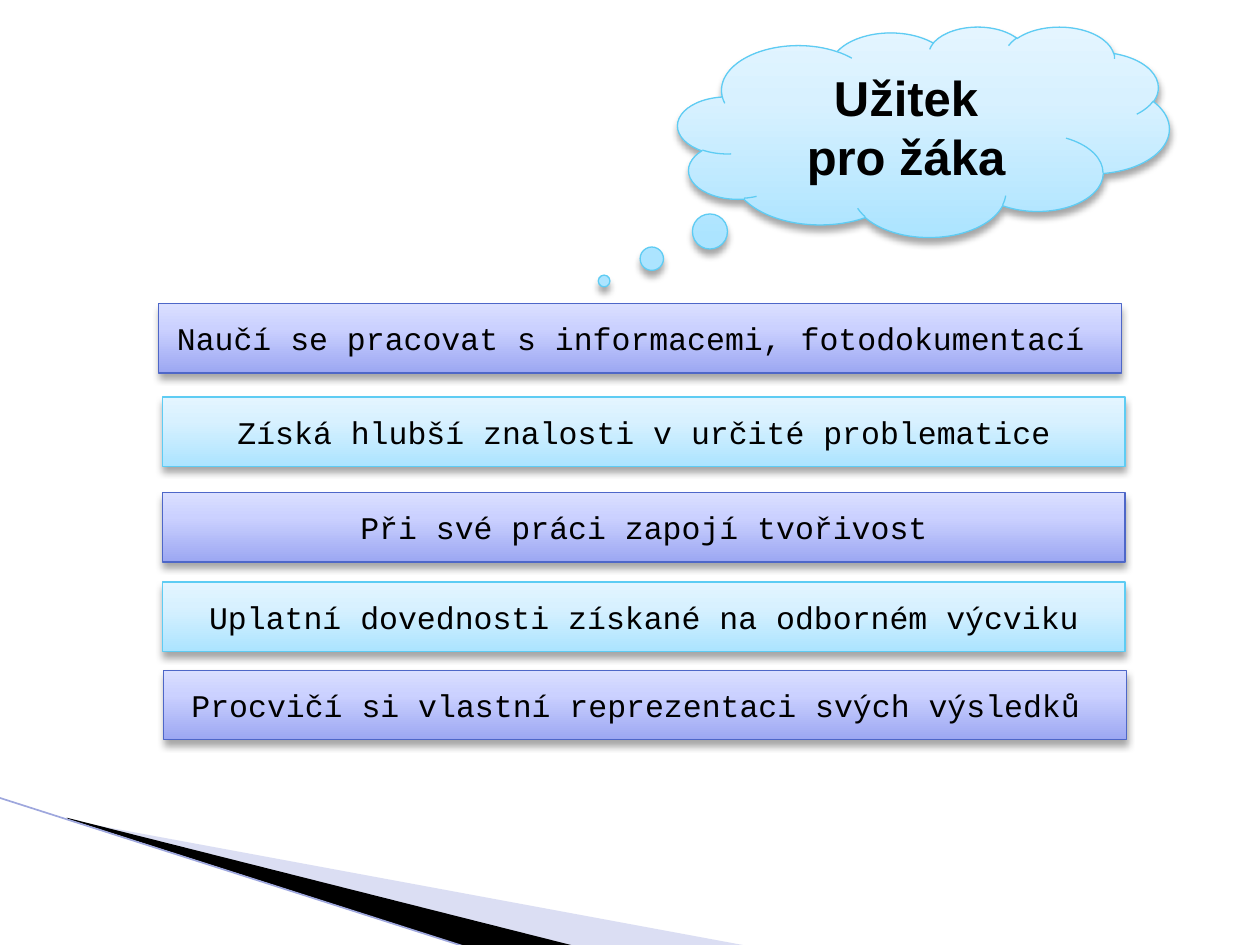
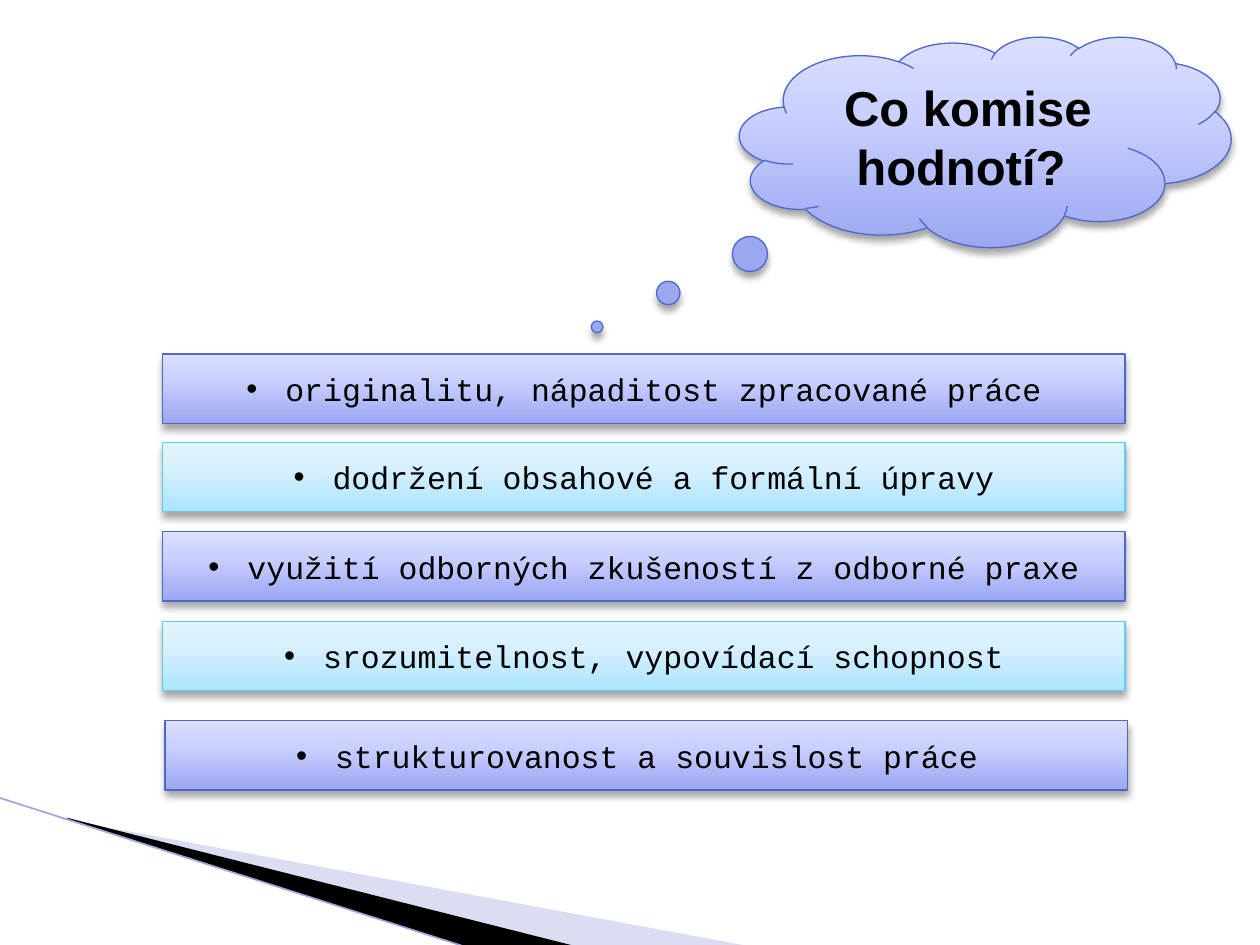
from copy import deepcopy

from lxml.etree import SubElement
from pptx import Presentation
from pptx.dml.color import RGBColor
from pptx.enum.shapes import MSO_CONNECTOR, MSO_SHAPE
from pptx.enum.text import MSO_ANCHOR, PP_ALIGN
from pptx.oxml.ns import qn
from pptx.util import Inches, Pt

# Content: each bar is (left, top, text)
SLIDES = [
    {
        "cloud": (5.38, 0.21), "tail": (-0.65, 0.71), "cloud_tone": "sky",
        "title": ["Užitek", "pro žáka"],
        "bullets": False,
        "bars": [
            (1.26, 2.41, "Naučí se pracovat s informacemi, fotodokumentací "),
            (1.29, 3.15, "Získá hlubší znalosti v určité problematice"),
            (1.29, 3.91, "Při své práci zapojí tvořivost"),
            (1.29, 4.62, "Uplatní dovednosti získané na odborném výcviku"),
            (1.3, 5.32, "Procvičí si vlastní reprezentaci svých výsledků "),
        ],
    },
    {
        "cloud": (5.87, 0.29), "tail": (-0.79, 0.88), "cloud_tone": "violet",
        "title": ["Co komise hodnotí? "],
        "bullets": True,
        "bars": [
            (1.29, 2.81, "originalitu, nápaditost zpracované práce"),
            (1.29, 3.51, "dodržení obsahové a formální úpravy"),
            (1.29, 4.22, "využití odborných zkušeností z odborné praxe"),
            (1.29, 4.93, "srozumitelnost, vypovídací schopnost"),
            (1.31, 5.72, "strukturovanost a souvislost práce "),
        ],
    },
]

# Shared style
COLORS = {
    "text": "000000", "shadow": "000000", "title_outline": "B4DCFA",
    "pale_wedge": "A6AEE1", "dark_wedge": "000000", "edge": "9EA7DD",
    "violet_line": "4E67C8", "sky_line": "5ECCF3",
}
GRADIENTS = {
    "violet": ["9CA7F2", "CBD1FF", "DADFFF"],
    "sky": ["ACE4FF", "D8F1FF", "E4F5FF"],
}
GRADIENT_STOPS = [0, 0.65, 1]
BAR_TONES = ["violet", "sky"]
BAR_SIZE = (7.64, 0.55)
CLOUD_SIZE = (3.9, 1.67)
BULLET_INDENT = 0.31

# Corner decoration: (colour, opacity in percent, outline points)
WEDGES = [
    ("pale_wedge", 40, [(0.55, 6.51), (5.95, 7.51), (4.56, 7.51), (0.55, 6.5)]),
    ("dark_wedge", 100, [(0.53, 6.49), (4.57, 7.51), (3.72, 7.52), (0.54, 6.5)]),
]
EDGE = (-0.01, 6.33, 3.71, 7.52)


def rgb(name):
    return RGBColor.from_string(COLORS[name])


def add_color(parent, name, opacity=100):
    color = SubElement(parent, qn("a:srgbClr"), val=COLORS[name])
    if opacity < 100:
        SubElement(color, qn("a:alpha"), val=str(opacity * 1000))


def add_corner(page):
    for color, opacity, points in WEDGES:
        corners = [(Inches(x), Inches(y)) for x, y in points]
        builder = page.shapes.build_freeform(*corners[0])
        builder.add_line_segments(corners[1:], close=True)
        wedge = builder.convert_to_shape()
        wedge.shadow.inherit = False
        wedge.line.fill.background()
        wedge.fill.solid()
        wedge.fill.fore_color.rgb = rgb(color)
        if opacity < 100:
            value = wedge._element.spPr.find(".//" + qn("a:srgbClr"))
            SubElement(value, qn("a:alpha"), val=str(opacity * 1000))
    edge = page.shapes.add_connector(MSO_CONNECTOR.STRAIGHT, *map(Inches, EDGE))
    edge.line.color.rgb = rgb("edge")
    edge.line.width = Pt(0.95)
    SubElement(edge._element.spPr, qn("a:effectLst"))


def add_glossy_shape(page, kind, position, size, tone):
    """Shape with a vertical gradient, a thin line and a soft shadow below."""
    shape = page.shapes.add_shape(kind, *map(Inches, position + size))
    shape.fill.gradient()
    properties = shape._element.spPr
    first_stop = properties.find(".//" + qn("a:gs"))
    first_stop.addnext(deepcopy(first_stop))
    shape.fill.gradient_angle = 90
    for stop, place, color in zip(shape.fill.gradient_stops, GRADIENT_STOPS, GRADIENTS[tone]):
        stop.position = place
        stop.color.rgb = RGBColor.from_string(color)
    shape.line.color.rgb = rgb(tone + "_line")
    shape.line.width = Pt(0.75)
    shape.shadow.inherit = False
    shadow = SubElement(properties.find(qn("a:effectLst")), qn("a:outerShdw"),
                        blurRad=str(Pt(4)), dist=str(Pt(3)), dir="5400000", rotWithShape="0")
    add_color(shadow, "shadow", 35)
    shape.text_frame.word_wrap = True
    shape.text_frame.vertical_anchor = MSO_ANCHOR.MIDDLE
    return shape


def write(para, text, font_name, size, bold=False):
    para.alignment = PP_ALIGN.CENTER
    span = para.add_run()
    span.text = text
    para.font.name = font_name
    para.font.size = Pt(size)
    para.font.bold = bold
    para.font.color.rgb = rgb("text")
    return span


def add_bullet(para):
    settings = para._p.get_or_add_pPr()
    settings.set("marL", str(Inches(BULLET_INDENT)))
    settings.set("indent", str(-Inches(BULLET_INDENT)))
    SubElement(settings, qn("a:buFont"), typeface="Arial")
    SubElement(settings, qn("a:buChar"), char="•")


def add_bar(page, left, top, text, tone, bulleted):
    bar = add_glossy_shape(page, MSO_SHAPE.RECTANGLE, (left, top), BAR_SIZE, tone)
    para = bar.text_frame.paragraphs[0]
    if bulleted:
        add_bullet(para)
    write(para, text, "Courier New", 18)


def add_cloud(page, content):
    cloud = add_glossy_shape(page, MSO_SHAPE.CLOUD_CALLOUT, content["cloud"],
                             CLOUD_SIZE, content["cloud_tone"])
    for index, offset in enumerate(content["tail"]):
        cloud.adjustments[index] = offset
    frame = cloud.text_frame
    for index, text in enumerate(content["title"]):
        para = frame.add_paragraph() if index else frame.paragraphs[0]
        span = write(para, text, "Arial", 28, bold=True)
        outline = SubElement(span._r.get_or_add_rPr(), qn("a:ln"), w=str(Pt(0.75)))
        add_color(SubElement(outline, qn("a:solidFill")), "title_outline")


def main():
    deck = Presentation()
    deck.slide_width, deck.slide_height = Inches(10), Inches(7.5)
    for content in SLIDES:
        page = deck.slides.add_slide(deck.slide_layouts[6])
        add_corner(page)
        for index, (left, top, text) in enumerate(content["bars"]):
            tone = BAR_TONES[index % len(BAR_TONES)]
            add_bar(page, left, top, text, tone, content["bullets"])
        add_cloud(page, content)
    deck.save("out.pptx")


if __name__ == "__main__":
    main()
